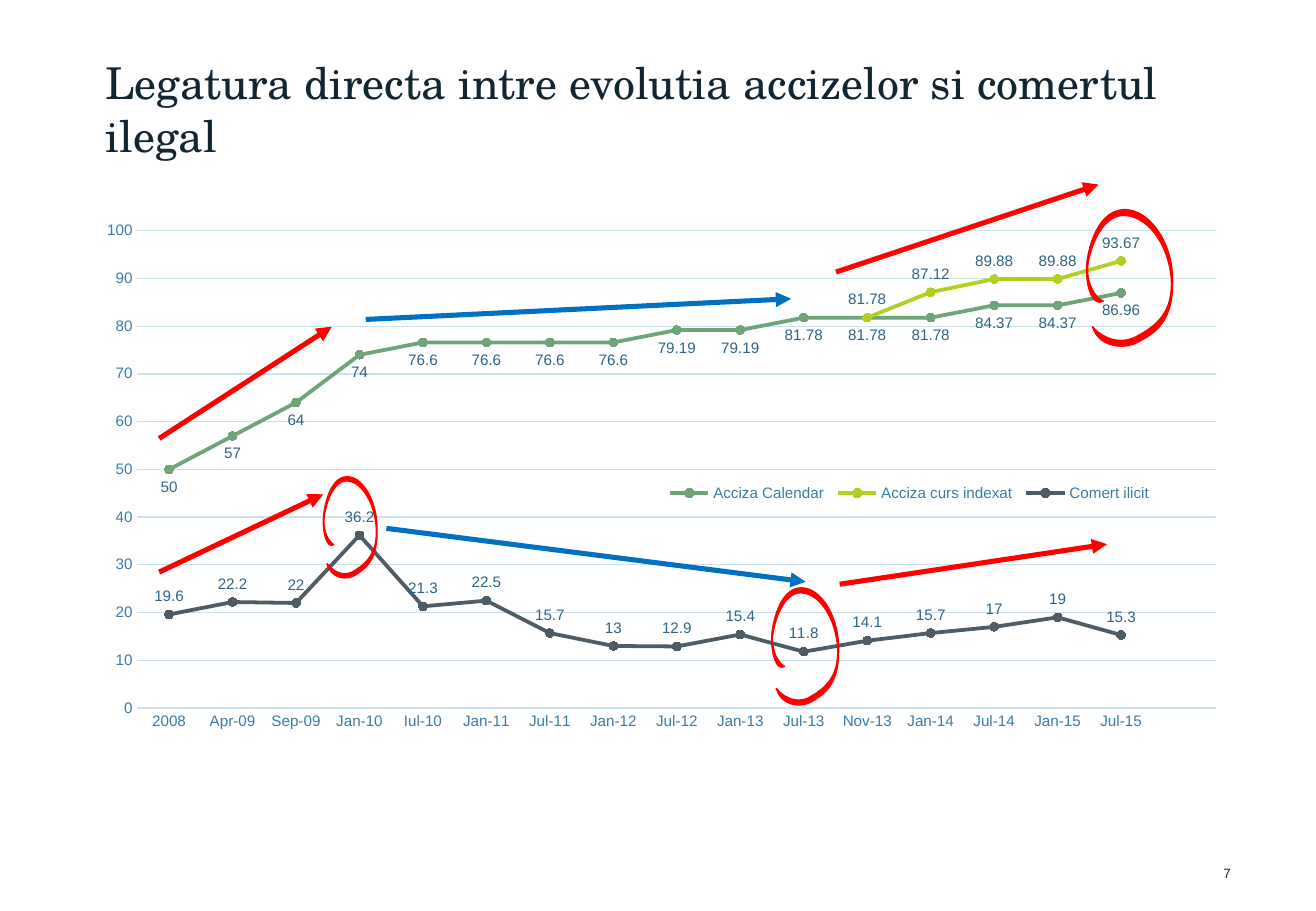
from dataclasses import dataclass

from lxml import etree
from pptx import Presentation
from pptx.chart.data import CategoryChartData
from pptx.dml.color import RGBColor
from pptx.enum.chart import XL_CHART_TYPE, XL_LABEL_POSITION, XL_LEGEND_POSITION, XL_MARKER_STYLE, XL_TICK_MARK
from pptx.enum.shapes import MSO_CONNECTOR
from pptx.enum.text import MSO_ANCHOR, MSO_AUTO_SIZE, PP_ALIGN
from pptx.oxml.ns import qn
from pptx.util import Inches, Pt

LINE_MARKERS = XL_CHART_TYPE.LINE_MARKERS
ABOVE, BELOW = XL_LABEL_POSITION.ABOVE, XL_LABEL_POSITION.BELOW
LEGEND_BOTTOM = XL_LEGEND_POSITION.BOTTOM
CIRCLE = XL_MARKER_STYLE.CIRCLE
NO_TICK = XL_TICK_MARK.NONE
STRAIGHT = MSO_CONNECTOR.STRAIGHT
TOP, MIDDLE = MSO_ANCHOR.TOP, MSO_ANCHOR.MIDDLE
LEFT, RIGHT = PP_ALIGN.LEFT, PP_ALIGN.RIGHT
NO_AUTOFIT = MSO_AUTO_SIZE.NONE
CHART_WIDTH, CHART_HEIGHT = 9.52, 4.67


@dataclass(frozen=True)
class Theme:
    ink: RGBColor = RGBColor.from_string("122632")
    axis: RGBColor = RGBColor.from_string("3B7CA4")
    grid: RGBColor = RGBColor.from_string("CEE2ED")
    label: RGBColor = RGBColor.from_string("2F6483")
    green: RGBColor = RGBColor.from_string("6FA478")
    lime: RGBColor = RGBColor.from_string("B0D121")
    slate: RGBColor = RGBColor.from_string("4D5C65")
    red: RGBColor = RGBColor.from_string("FF0000")
    blue: RGBColor = RGBColor.from_string("0070C0")
    title_font: str = "TeX Gyre Schola"
    body_font: str = "Arial"
    title_size: Pt = Pt(26)
    chart_size: Pt = Pt(9)
    number_size: Pt = Pt(8)


theme = Theme()


def write(box, text, font, size, align=LEFT, anchor=TOP):
    frame = box.text_frame
    frame.word_wrap = True
    frame.auto_size = NO_AUTOFIT
    frame.vertical_anchor = anchor
    para = frame.paragraphs[0]
    para.alignment = align
    span = para.add_run()
    span.text = text
    span.font.name, span.font.size = font, size
    span.font.color.rgb = theme.ink
    return frame


def place_in_chart(element, index, left, top, width, height, **modes):
    """Give a chart part a manual layout, measured in inches from the chart's corner."""
    for old in element.findall(qn("c:layout")):
        element.remove(old)
    layout = etree.Element(qn("c:layout"))
    manual = etree.SubElement(layout, qn("c:manualLayout"))
    settings = dict(modes, xMode="edge", yMode="edge", x=left / CHART_WIDTH, y=top / CHART_HEIGHT,
                    w=width / CHART_WIDTH, h=height / CHART_HEIGHT)
    for name, value in settings.items():
        etree.SubElement(manual, qn(f"c:{name}")).set("val", str(value))
    element.insert(index, layout)


deck = Presentation()
deck.slide_width, deck.slide_height = Inches(10.83), Inches(7.5)
page = deck.slides.add_slide(deck.slide_layouts[5])

title = page.shapes.title
title.left, title.top = Inches(0.77), Inches(0.41)
title.width, title.height = Inches(9.44), Inches(0.43)
write(title, "Legatura directa intre evolutia accizelor si comertul ilegal",
      theme.title_font, theme.title_size)

# Excise and illicit trade chart; every series ends with one empty slot
data = CategoryChartData(number_format="General")
data.categories = ["2008", "Apr-09", "Sep-09", "Jan-10", "Iul-10", "Jan-11", "Jul-11", "Jan-12", "Jul-12",
                   "Jan-13", "Jul-13", "Nov-13", "Jan-14", "Jul-14", "Jan-15", "Jul-15"]
series_rows = [
    ("Acciza Calendar", theme.green, BELOW,
     [50, 57, 64, 74, 76.6, 76.6, 76.6, 76.6, 79.19, 79.19, 81.78, 81.78, 81.78, 84.37, 84.37, 86.96, None]),
    ("Acciza curs indexat", theme.lime, ABOVE,
     [None] * 11 + [81.78, 87.12, 89.88, 89.88, 93.67, None]),
    ("Comert ilicit", theme.slate, ABOVE,
     [19.6, 22.2, 22, 36.2, 21.3, 22.5, 15.7, 13, 12.9, 15.4, 11.8, 14.1, 15.7, 17, 19, 15.3, None]),
]
for name, _, _, values in series_rows:
    data.add_series(name, values)
chart = page.shapes.add_chart(LINE_MARKERS, Inches(0.69), Inches(1.74),
                              Inches(CHART_WIDTH), Inches(CHART_HEIGHT), data).chart
chart.has_title = False
chart.font.name, chart.font.size = theme.body_font, theme.chart_size
chart.font.color.rgb = theme.axis
chart.plots[0].vary_by_categories = False

for series, (_, color, position, _) in zip(chart.plots[0].series, series_rows):
    series.smooth = False
    series.format.line.color.rgb = color
    series.format.line.width = Pt(2.25)
    series.marker.style, series.marker.size = CIRCLE, 5
    series.marker.format.fill.solid()
    series.marker.format.fill.fore_color.rgb = color
    series.marker.format.line.color.rgb = color
    labels = series.data_labels
    labels.show_value, labels.position = True, position
    labels.font.name, labels.font.size = theme.body_font, theme.chart_size
    labels.font.color.rgb = theme.label

values_axis, dates_axis = chart.value_axis, chart.category_axis
for axis in (values_axis, dates_axis):
    axis.major_tick_mark = axis.minor_tick_mark = NO_TICK
values_axis.minimum_scale, values_axis.maximum_scale, values_axis.major_unit = 0, 100, 10
values_axis.format.line.fill.background()
values_axis.has_major_gridlines = True
for line in (values_axis.major_gridlines.format.line, dates_axis.format.line):
    line.color.rgb, line.width = theme.grid, Pt(0.75)

chart.has_legend = True
legend = chart.legend
legend.position, legend.include_in_layout = LEGEND_BOTTOM, False
legend.font.name, legend.font.size = theme.body_font, theme.chart_size
legend.font.color.rgb = theme.axis
plot_area = chart.plots[0]._element.getparent()
place_in_chart(plot_area, 0, 0.44, 0.16, 8.88, 3.93, layoutTarget="inner")
place_in_chart(legend._element, 1, 4.75, 2.18, 4.09, 0.28)

number = page.shapes.add_textbox(Inches(9.7), Inches(7.03), Inches(0.43), Inches(0.31))
frame = write(number, "7", theme.body_font, theme.number_size, RIGHT, MIDDLE)
frame.margin_left = frame.margin_top = frame.margin_right = frame.margin_bottom = 0

# Hand-drawn ring: Bezier curves in a 72 by 120 box, each going on from the last point
RING_WIDTH, RING_HEIGHT = 72, 120
ring_start = (5, 101)
ring_curves = [
    ((17, 114), (32, 115), (43, 108)), ((58, 100), (70, 89), (70, 66)),
    ((70, 43), (57, 15), (36, 10)), ((12, 4), (1, 42), (1, 54)),
    ((1, 66), (7, 77), (14, 80)), ((5, 85), (0, 68), (0, 54)),
    ((0, 40), (9, 0), (36, 5)), ((53, 8), (72, 32), (71, 66)),
    ((71, 100), (53, 108), (42, 114)), ((31, 120), (10, 118), ring_start),
]
ring_commands = [("moveTo", [ring_start])] + [("cubicBezTo", curve) for curve in ring_curves] + [("close", [])]

for bounds in [(8.94, 1.68, 0.72, 1.2), (2.66, 3.89, 0.45, 0.89), (6.35, 4.8, 0.56, 1.03)]:
    builder = page.shapes.build_freeform(0, 0, scale=Inches(0.01))
    builder.add_line_segments([(RING_WIDTH, RING_HEIGHT)], close=True)
    ring = builder.convert_to_shape()
    ring.left, ring.top, ring.width, ring.height = map(Inches, bounds)
    outline = ring._element.spPr.find(f".//{qn('a:path')}")
    for command in list(outline):
        outline.remove(command)
    for name, points in ring_commands:
        command = etree.SubElement(outline, qn(f"a:{name}"))
        for x, y in points:
            point = etree.SubElement(command, qn("a:pt"))
            point.set("x", str(x))
            point.set("y", str(y))
    ring.shadow.inherit = False
    ring.fill.solid()
    ring.fill.fore_color.rgb = ring.line.color.rgb = theme.red
    ring.line.width = Pt(0.75)

trend_arrows = [
    (1.31, 3.61, 2.73, 2.69, theme.red), (3.01, 2.63, 6.51, 2.46, theme.blue),
    (6.88, 2.24, 9.04, 1.52, theme.red), (6.91, 4.81, 9.11, 4.48, theme.red),
    (3.18, 4.35, 6.63, 4.79, theme.blue), (1.31, 4.71, 2.66, 4.07, theme.red),
]
for *ends, color in trend_arrows:
    arrow = page.shapes.add_connector(STRAIGHT, *map(Inches, ends))
    arrow.line.color.rgb, arrow.line.width = color, Pt(3)
    etree.SubElement(arrow.line._get_or_add_ln(), qn("a:tailEnd")).set("type", "triangle")
    etree.SubElement(arrow._element.spPr, qn("a:effectLst"))

deck.save("out.pptx")
